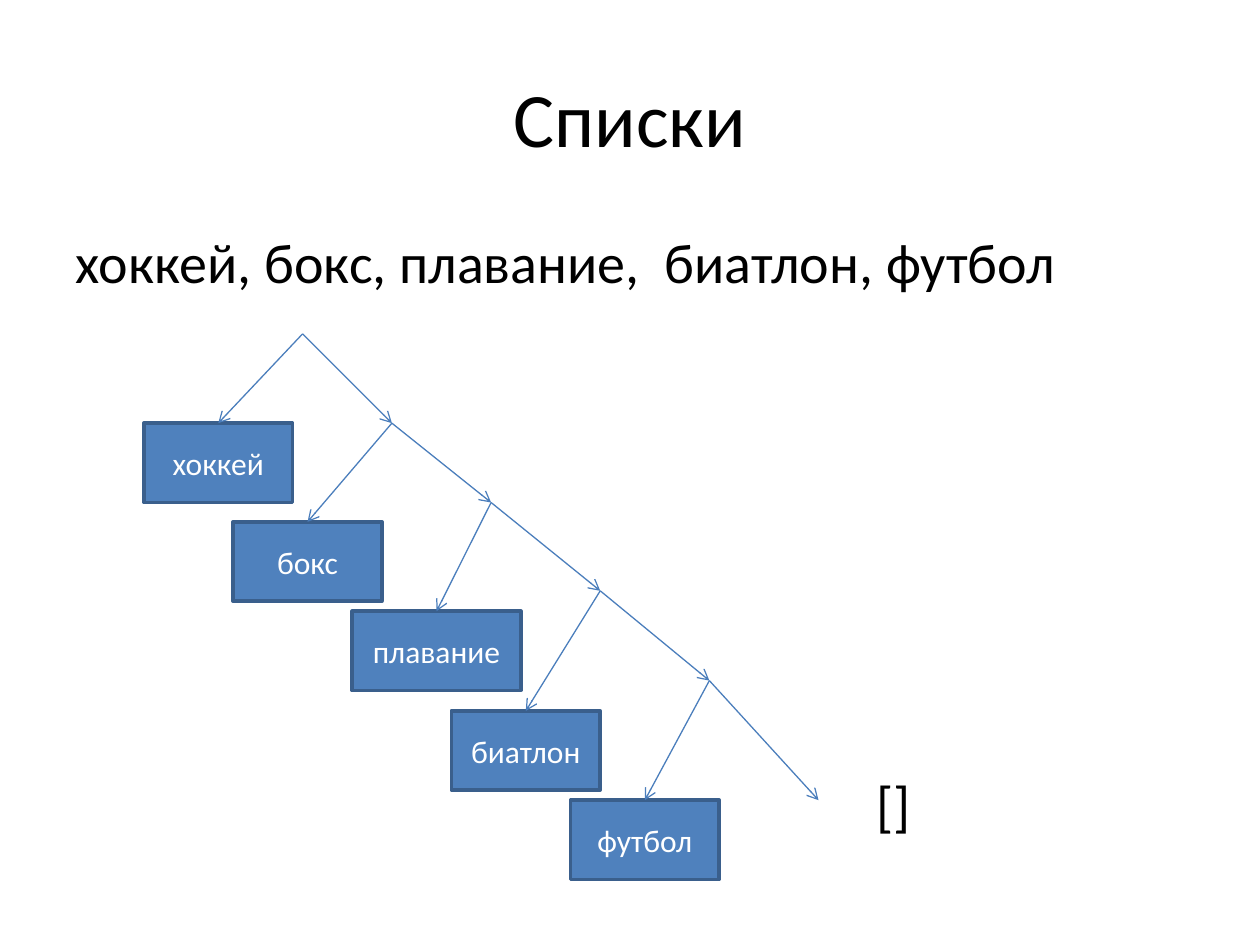
from itertools import pairwise

from lxml import etree
from pptx import Presentation
from pptx.dml.color import RGBColor
from pptx.enum.shapes import MSO_CONNECTOR, MSO_SHAPE
from pptx.enum.text import MSO_ANCHOR, MSO_AUTO_SIZE, PP_ALIGN
from pptx.oxml.ns import qn
from pptx.util import Cm, Pt

RECTANGLE = MSO_SHAPE.RECTANGLE
STRAIGHT = MSO_CONNECTOR.STRAIGHT
MIDDLE, TOP = MSO_ANCHOR.MIDDLE, MSO_ANCHOR.TOP
CENTER, LEFT = PP_ALIGN.CENTER, PP_ALIGN.LEFT
NO_AUTOFIT = MSO_AUTO_SIZE.NONE

BLACK = RGBColor(0x00, 0x00, 0x00)
WHITE = RGBColor(0xFF, 0xFF, 0xFF)
BOX_FILL = RGBColor(0x4F, 0x81, 0xBD)
BOX_EDGE = RGBColor(0x3A, 0x5F, 0x8C)
ARROW = RGBColor(0x4B, 0x7E, 0xBC)

TOP_SIDE = 0
BOX_HEIGHT = 1.6

# Joints of the list's spine: x, y in cm
JOINTS = [(6.1, 6.73), (7.9, 8.53), (9.9, 10.13),
          (12.1, 11.91), (14.3, 13.72), (16.5, 16.13)]
# List items: word, left, top, width in cm
ITEMS = [("хоккей", 2.9, 8.53, 3), ("бокс", 4.7, 10.52, 3),
         ("плавание", 7.1, 12.32, 3.4), ("биатлон", 9.1, 14.33, 3),
         ("футбол", 11.5, 16.13, 3)]


class ListSlide:
    font = "Calibri"

    def __init__(self, slide):
        self.slide = slide

    def add_text(self, paragraph, text, size, color, align):
        paragraph.alignment = align
        run = paragraph.add_run()
        run.text = text
        run.font.name = self.font
        run.font.size = Pt(size)
        run.font.color.rgb = color

    def place(self, placeholder, left, top, width, height, anchor):
        placeholder.left, placeholder.top = Cm(left), Cm(top)
        placeholder.width, placeholder.height = Cm(width), Cm(height)
        frame = placeholder.text_frame
        frame.auto_size = NO_AUTOFIT
        frame.vertical_anchor = anchor
        return frame

    def title(self, text):
        frame = self.place(self.slide.shapes.title, 1.27, 0.76, 22.86, 3.18, MIDDLE)
        self.add_text(frame.paragraphs[0], text, 44, BLACK, CENTER)

    def body(self, lines):
        """Add unbulleted lines given as text, indent in cm, space before in pt."""
        frame = self.place(self.slide.placeholders[1], 1.27, 4.45, 22.86, 12.57, TOP)
        for index, (text, indent, gap) in enumerate(lines):
            paragraph = frame.add_paragraph() if index else frame.paragraphs[0]
            paragraph.space_before = Pt(gap)
            properties = paragraph._p.get_or_add_pPr()
            properties.set("marL", str(Cm(indent)))
            properties.set("indent", "0")
            etree.SubElement(properties, qn("a:buNone"))
            self.add_text(paragraph, text, 32, BLACK, LEFT)

    def box(self, word, left, top, width):
        box = self.slide.shapes.add_shape(
            RECTANGLE, Cm(left), Cm(top), Cm(width), Cm(BOX_HEIGHT))
        box.shadow.inherit = False
        box.fill.solid()
        box.fill.fore_color.rgb = BOX_FILL
        box.line.color.rgb = BOX_EDGE
        box.line.width = Pt(2)
        frame = box.text_frame
        frame.word_wrap = True
        frame.vertical_anchor = MIDDLE
        frame.margin_left = frame.margin_right = Cm(0.1)
        self.add_text(frame.paragraphs[0], word, 18, WHITE, CENTER)
        return box

    def arrow(self, start, end):
        arrow = self.slide.shapes.add_connector(
            STRAIGHT, *(Cm(length) for length in (*start, *end)))
        arrow.line.color.rgb = ARROW
        arrow.line.width = Pt(0.75)
        properties = arrow._element.spPr
        etree.SubElement(properties.find(qn("a:ln")), qn("a:tailEnd"), type="arrow")
        etree.SubElement(properties, qn("a:effectLst"))
        return arrow


def main():
    presentation = Presentation()
    presentation.slide_width, presentation.slide_height = Cm(25.4), Cm(19.05)
    page = ListSlide(presentation.slides.add_slide(presentation.slide_layouts[1]))

    page.title("Списки")
    page.body([("хоккей, бокс, плавание,  биатлон, футбол", 0, 0),
               ("[]", 16.15, 272)])

    boxes = [page.box(*item) for item in ITEMS]
    for (joint, next_joint), item, box in zip(pairwise(JOINTS), ITEMS, boxes):
        _, left, top, width = item
        page.arrow(joint, (left + width / 2, top)).end_connect(box, TOP_SIDE)
        page.arrow(joint, next_joint)

    presentation.save("out.pptx")


if __name__ == "__main__":
    main()
